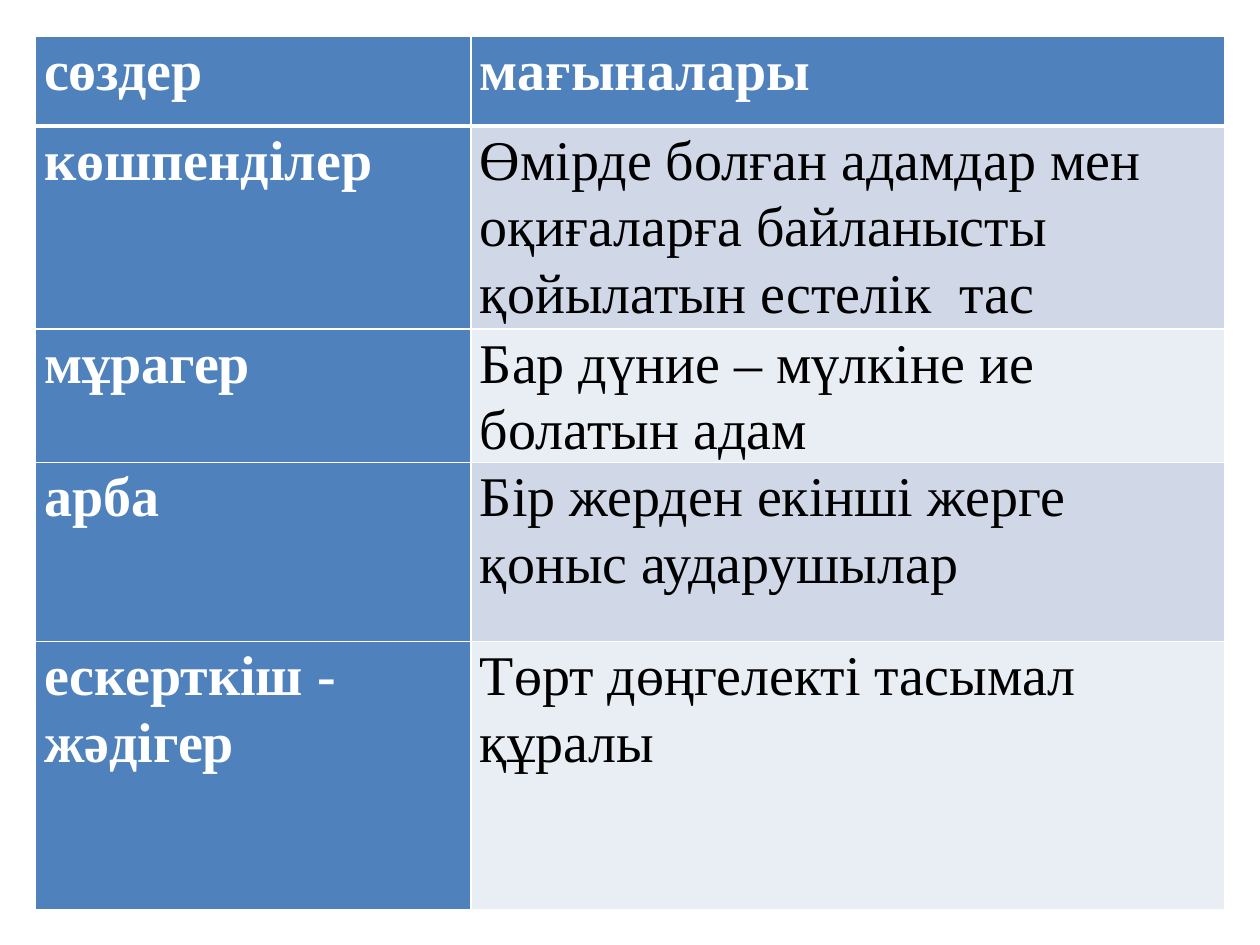
from dataclasses import dataclass

from lxml.etree import SubElement
from pptx import Presentation
from pptx.dml.color import RGBColor as RGB
from pptx.oxml.ns import qn
from pptx.util import Inches, Pt


@dataclass(frozen=True)
class Theme:
    font: str = "Times New Roman"
    size: float = 32
    line_spacing: float = 1.07
    accent: str = "4F81BD"
    bands: tuple[str, str] = ("D0D8E8", "E9EDF4")
    light: str = "FFFFFF"
    dark: str = "000000"
    thin: float = 1
    thick: float = 3


@dataclass(frozen=True)
class Entry:
    word: str
    meaning: str
    height: float


THEME = Theme()
LEFT, TOP = 0.28, 0.29
COLUMN_WIDTHS = (3.46, 5.98)
ENTRIES = (
    Entry("сөздер", "мағыналары", 0.71),
    Entry("көшпенділер", "Өмірде болған адамдар мен оқиғаларға байланысты "
          "қойылатын естелік  тас", 1.61),
    Entry("мұрагер", "Бар дүние – мүлкіне ие болатын адам", 1.06),
    Entry("арба", "Бір жерден екінші жерге қоныс аударушылар", 1.42),
    Entry("ескерткіш - жәдігер", "Төрт дөңгелекті тасымал құралы", 2.13),
)


def set_borders(cell, top: float, bottom: float) -> None:
    """Draw light borders; must run before the fill, which follows them in the XML."""
    tc_pr = cell._tc.get_or_add_tcPr()
    widths = {"lnL": THEME.thin, "lnR": THEME.thin, "lnT": top, "lnB": bottom}
    for side, width in widths.items():
        ln = SubElement(tc_pr, qn(f"a:{side}"), w=str(Pt(width)))
        fill = SubElement(ln, qn("a:solidFill"))
        SubElement(fill, qn("a:srgbClr"), val=THEME.light)


def set_text(cell, text: str, *, color: str, bold: bool) -> None:
    cell.margin_left = cell.margin_right = Inches(0.07)
    cell.margin_top = cell.margin_bottom = 0
    p = cell.text_frame.paragraphs[0]
    p.line_spacing = THEME.line_spacing
    r = p.add_run()
    r.text = text
    r.font.name = THEME.font
    r.font.size = Pt(THEME.size)
    r.font.bold = bold
    r.font.color.rgb = RGB.from_string(color)


def draw_glossary(s, entries: tuple[Entry, ...]) -> None:
    height = sum(entry.height for entry in entries)
    table = s.shapes.add_table(
        len(entries), len(COLUMN_WIDTHS), Inches(LEFT), Inches(TOP),
        Inches(sum(COLUMN_WIDTHS)), Inches(height)).table
    for column, width in zip(table.columns, COLUMN_WIDTHS):
        column.width = Inches(width)

    for i, entry in enumerate(entries):
        table.rows[i].height = Inches(entry.height)
        for j, text in enumerate((entry.word, entry.meaning)):
            cell = table.cell(i, j)
            is_heading = i == 0 or j == 0
            set_borders(cell, top=THEME.thick if i == 1 else THEME.thin,
                        bottom=THEME.thick if i == 0 else THEME.thin)
            cell.fill.solid()
            cell.fill.fore_color.rgb = RGB.from_string(
                THEME.accent if is_heading else THEME.bands[(i - 1) % 2])
            set_text(cell, text, bold=is_heading,
                     color=THEME.light if is_heading else THEME.dark)


def main() -> None:
    prs = Presentation()
    prs.slide_width, prs.slide_height = Inches(10), Inches(7.5)
    s = prs.slides.add_slide(prs.slide_layouts[6])
    draw_glossary(s, ENTRIES)
    prs.save("out.pptx")


if __name__ == "__main__":
    main()
